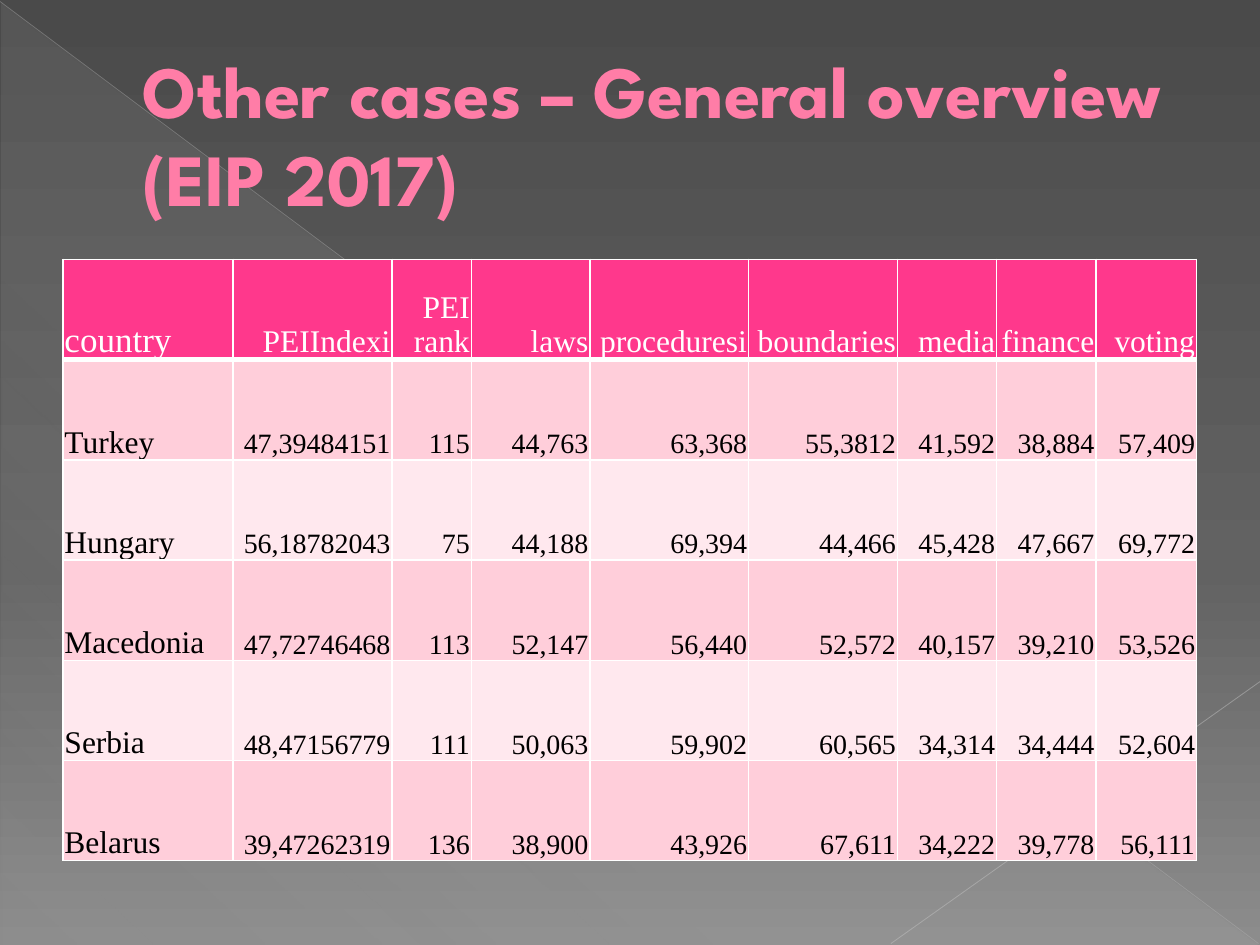
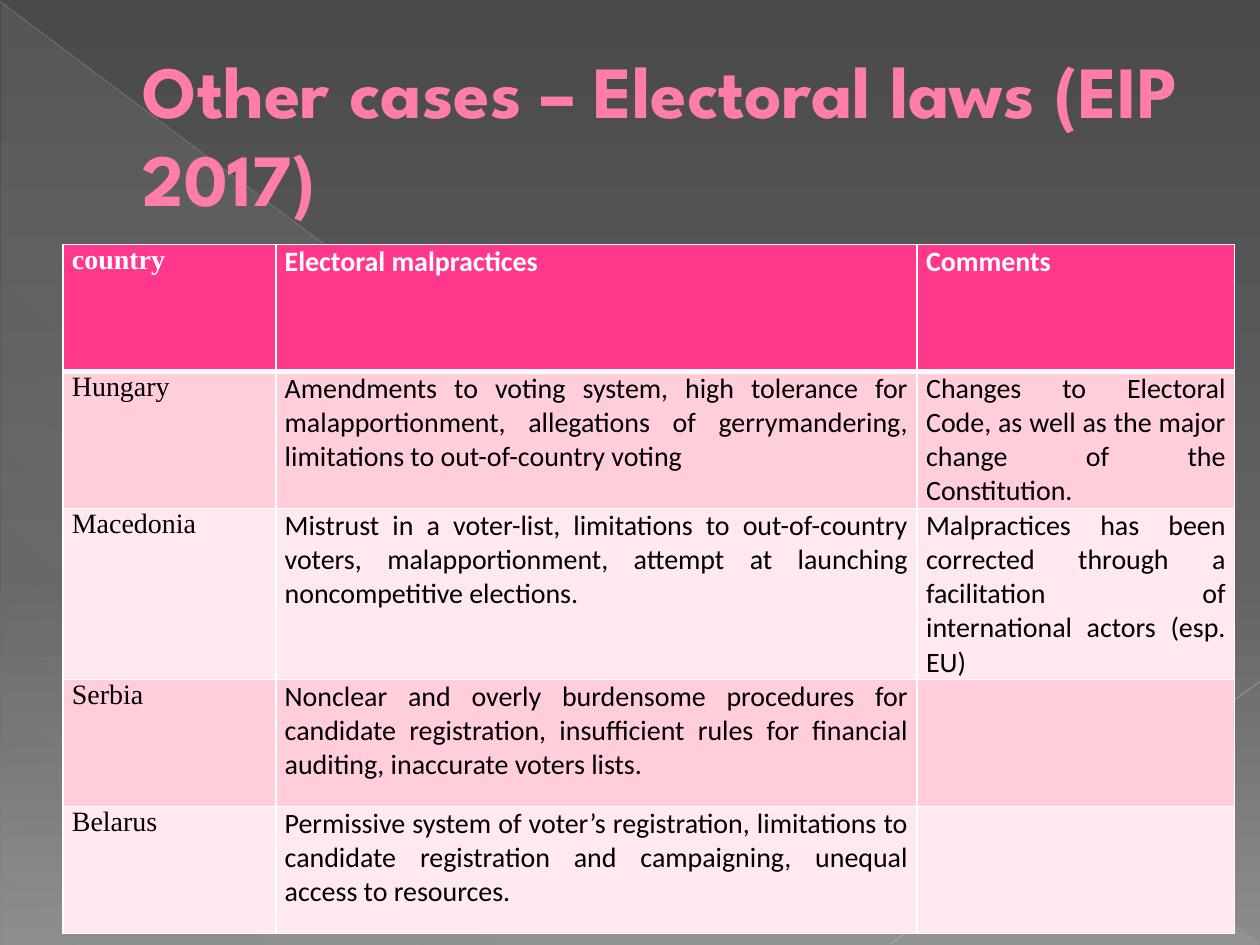
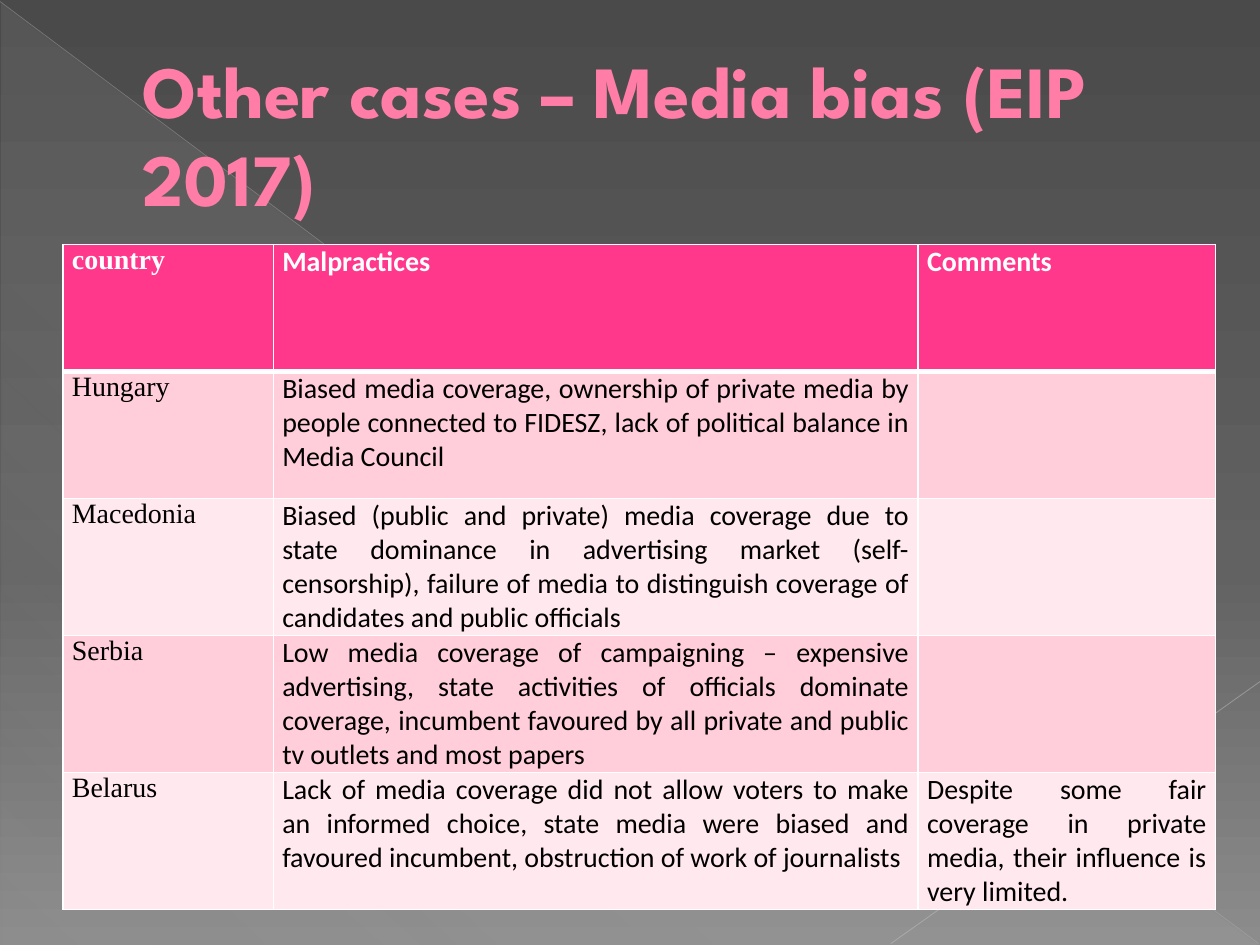
from dataclasses import dataclass
from typing import Any

from lxml import etree
from pptx import Presentation
from pptx import util as u
from pptx.dml.color import RGBColor
from pptx.enum import shapes, text
from pptx.oxml.ns import qn
from pptx.util import Cm

Stop = tuple[int, str, int]  # position %, colour, opacity %


@dataclass(frozen=True)
class Theme:
    background: tuple[Stop, ...] = ((0, "4A4A4A", 100), (60, "626262", 100), (100, "8C8C8C", 100))
    wedge: tuple[Stop, ...] = ((0, "D2D2D2", 10), (70, "D2D2D2", 8), (100, "D2D2D2", 1))
    title: str = "FF7DA7"
    title_outline: str = "B12761"
    header: str = "FF388C"
    bands: tuple[str, str] = ("FFCEDA", "FFE8EE")
    header_text: str = "FFFFFF"
    body_text: str = "000000"
    border: str = "FFFFFF"
    title_font: str = "League Spartan"
    serif: str = "Times New Roman"
    sans: str = "Calibri"
    title_size: int = 42
    border_width: float = 1
    header_rule: float = 3


THEME = Theme()


@dataclass(frozen=True)
class TableStyle:
    """Pairs hold the value for the country column and for the other columns."""
    header_sizes: tuple[int, int]
    body_sizes: tuple[int, int]
    fonts: tuple[str, str]
    aligns: tuple[Any, Any]
    header_bold: bool
    anchor: Any
    side_margin: float
    top_margin: float


@dataclass(frozen=True)
class TableSlide:
    title: str
    style: TableStyle
    top: float
    row_height: float
    col_widths: tuple[float, ...]
    rows: tuple[tuple[str, ...], ...]


@dataclass(frozen=True)
class Ray:
    start: tuple[float, float]
    end: tuple[float, float]
    color: str
    width: float
    opacity: int


RAYS = (
    Ray((0, 0.03), (25.37, 19.02), "BFBFBF", 0.39, 35),
    Ray((25.4, 13.74), (17.96, 19.02), "C6C6C6", 0.47, 45),
)

FIGURES = TableStyle((20, 18), (18, 16), (THEME.serif, THEME.serif),
                     (text.PP_ALIGN.LEFT, text.PP_ALIGN.RIGHT), False,
                     text.MSO_ANCHOR.BOTTOM, 0.03, 0.03)
REMARKS = TableStyle((16, 16), (16, 16), (THEME.serif, THEME.sans),
                     (text.PP_ALIGN.JUSTIFY, text.PP_ALIGN.JUSTIFY), True,
                     text.MSO_ANCHOR.TOP, 0.18, 0)

SLIDES = (
    TableSlide(
        "Other cases – General overview (EIP 2017)", FIGURES, 5.23, 2.02,
        (3.43, 3.2, 1.6, 2.39, 3.2, 3, 2, 2, 2.03),
        (
            ("country", "PEIIndexi", "PEI rank", "laws", "proceduresi", "boundaries",
             "media", "finance", "voting"),
            ("Turkey", "47,39484151", "115", "44,763", "63,368", "55,3812",
             "41,592", "38,884", "57,409"),
            ("Hungary", "56,18782043", "75", "44,188", "69,394", "44,466",
             "45,428", "47,667", "69,772"),
            ("Macedonia", "47,72746468", "113", "52,147", "56,440", "52,572",
             "40,157", "39,210", "53,526"),
            ("Serbia", "48,47156779", "111", "50,063", "59,902", "60,565",
             "34,314", "34,444", "52,604"),
            ("Belarus", "39,47262319", "136", "38,900", "43,926", "67,611",
             "34,222", "39,778", "56,111"),
        )),
    TableSlide(
        "Other cases – Electoral laws (EIP 2017)", REMARKS, 4.93, 2.56,
        (4.29, 12.93, 6.4),
        (
            ("country", "Electoral malpractices", "Comments"),
            ("Hungary",
             "Amendments to voting system, high tolerance for malapportionment, allegations of "
             "gerrymandering, limitations to out-of-country voting",
             "Changes to Electoral Code, as well as the major change of the Constitution."),
            ("Macedonia",
             "Mistrust in a voter-list, limitations to out-of-country voters, malapportionment, "
             "attempt at launching noncompetitive elections.",
             "Malpractices has been corrected through a facilitation of international actors "
             "(esp. EU)"),
            ("Serbia",
             "Nonclear and overly burdensome procedures for candidate registration, insufficient "
             "rules for financial auditing, inaccurate voters lists.", ""),
            ("Belarus",
             "Permissive system of voter’s registration, limitations to candidate registration "
             "and campaigning, unequal access to resources.", ""),
        )),
    TableSlide(
        "Other cases – Media bias (EIP 2017)", REMARKS, 4.93, 2.56,
        (4.24, 13, 5.99),
        (
            ("country", "Malpractices", "Comments"),
            ("Hungary",
             "Biased media coverage, ownership of private media by people connected to FIDESZ, "
             "lack of political balance in Media Council", ""),
            ("Macedonia",
             "Biased (public and private) media coverage due to state dominance in advertising "
             "market (self-censorship), failure of media to distinguish coverage of candidates "
             "and public officials", ""),
            ("Serbia",
             "Low media coverage of campaigning – expensive advertising, state activities of "
             "officials dominate coverage, incumbent favoured by all private and public tv "
             "outlets and most papers", ""),
            ("Belarus",
             "Lack of media coverage did not allow voters to make an informed choice, state media "
             "were biased and favoured incumbent, obstruction of work of journalists",
             "Despite some fair coverage in private media, their influence is very limited."),
        )),
)


def set_values(obj: Any, values: dict[str, Any]) -> None:
    for name, value in values.items():
        setattr(obj, name, value)


def add_color(parent: Any, color: str, opacity: int = 100) -> None:
    clr = etree.SubElement(parent, qn("a:srgbClr"), val=color)
    if opacity < 100:
        etree.SubElement(clr, qn("a:alpha"), val=str(opacity * 1000))


def set_gradient(fill: Any, owner: Any, stops: tuple[Stop, ...], angle: int) -> None:
    """Fill with any number of stops; angle runs clockwise, owner is the element with the fill."""
    fill.gradient()
    fill.gradient_angle = 360 - angle
    gs_list = next(owner.iter(qn("a:gsLst")))
    for gs in list(gs_list):
        gs_list.remove(gs)
    for position, color, opacity in stops:
        gs = etree.SubElement(gs_list, qn("a:gs"), pos=str(position * 1000))
        add_color(gs, color, opacity)


def make_line(tag: str, color: str, width: float, opacity: int = 100) -> Any:
    ln = etree.Element(qn(tag), w=str(int(u.Pt(width))))
    add_color(etree.SubElement(ln, qn("a:solidFill")), color, opacity)
    return ln


def decorate_layout(layout: Any, slide: Any) -> None:
    """Draw the wedge and rays with the slide's shape tools, then hand them to the layout."""
    wedge = slide.shapes.add_shape(shapes.MSO_SHAPE.RIGHT_TRIANGLE,
                                   Cm(0.03), Cm(0.05), Cm(25.35), Cm(19))
    set_gradient(wedge.fill, wedge.element.spPr, THEME.wedge, 133)
    wedge.line.fill.background()
    wedge.shadow.inherit = False
    decor = [wedge]
    for ray in RAYS:
        line = slide.shapes.add_connector(shapes.MSO_CONNECTOR.STRAIGHT,
                                          *map(Cm, ray.start + ray.end))
        sp_pr = line.element.spPr
        sp_pr.append(make_line("a:ln", ray.color, ray.width, ray.opacity))
        etree.SubElement(sp_pr, qn("a:effectLst"))
        decor.append(line)
    for i, sp in enumerate(decor):
        next(sp.element.iter(qn("p:cNvPr"))).set("id", str(20 + i))
        layout.shapes.element.insert(2 + i, sp.element)


def write_title(slide: Any, title: str) -> None:
    sp = slide.shapes.title
    set_values(sp, {"left": Cm(1.27), "top": Cm(0.74), "width": Cm(22.86), "height": Cm(3.89)})
    tf = sp.text_frame
    set_values(tf, {"word_wrap": True, "auto_size": text.MSO_AUTO_SIZE.NONE,
                    "vertical_anchor": text.MSO_ANCHOR.MIDDLE})
    p = tf.paragraphs[0]
    p.alignment = text.PP_ALIGN.LEFT
    set_values_xml = p._p.get_or_add_pPr()
    set_values_xml.set("marL", str(int(Cm(1.35))))
    set_values_xml.set("indent", "0")
    r = p.add_run()
    r.text = title
    set_values(r.font, {"name": THEME.title_font, "size": u.Pt(THEME.title_size), "bold": True})
    r.font.color.rgb = RGBColor.from_string(THEME.title)
    r._r.get_or_add_rPr().insert(0, make_line("a:ln", THEME.title_outline, 0.5))


def set_borders(cell: Any, row: int) -> None:
    widths = {side: THEME.border_width for side in "LRTB"}
    if row < 2:
        widths["B" if row == 0 else "T"] = THEME.header_rule
    tc_pr = cell._tc.get_or_add_tcPr()
    for side, width in widths.items():
        tc_pr.append(make_line(f"a:ln{side}", THEME.border, width))


def format_cell(cell: Any, content: str, row: int, col: int, style: TableStyle) -> None:
    header, other = row == 0, int(col > 0)
    set_values(cell, {"vertical_anchor": style.anchor, "margin_left": Cm(style.side_margin),
                      "margin_right": Cm(style.side_margin),
                      "margin_top": Cm(style.top_margin), "margin_bottom": 0})
    set_borders(cell, row)
    cell.fill.solid()
    cell.fill.fore_color.rgb = RGBColor.from_string(
        THEME.header if header else THEME.bands[(row - 1) % 2])
    if not content:
        return
    p = cell.text_frame.paragraphs[0]
    p.alignment = style.aligns[other]
    r = p.add_run()
    r.text = content
    sizes = style.header_sizes if header else style.body_sizes
    set_values(r.font, {"name": style.fonts[other], "size": u.Pt(sizes[other]),
                        "bold": header and style.header_bold})
    r.font.color.rgb = RGBColor.from_string(THEME.header_text if header else THEME.body_text)


def draw_table(slide: Any, s: TableSlide) -> None:
    table = slide.shapes.add_table(len(s.rows), len(s.col_widths), Cm(1.27), Cm(s.top),
                                   Cm(sum(s.col_widths)), Cm(s.row_height * len(s.rows))).table
    for column, width in zip(table.columns, s.col_widths):
        column.width = Cm(width)
    for i, row in enumerate(s.rows):
        table.rows[i].height = Cm(s.row_height)
        for j, content in enumerate(row):
            format_cell(table.cell(i, j), content, i, j, s.style)


def main() -> None:
    prs = Presentation()
    set_values(prs, {"slide_width": Cm(25.4), "slide_height": Cm(19.05)})
    master = prs.slide_master
    set_gradient(master.background.fill, master.element, THEME.background, 90)
    layout = prs.slide_layouts.get_by_name("Title Only")
    for i, s in enumerate(SLIDES):
        slide = prs.slides.add_slide(layout)
        if i == 0:
            decorate_layout(layout, slide)
        write_title(slide, s.title)
        draw_table(slide, s)
    prs.save("out.pptx")


if __name__ == "__main__":
    main()
